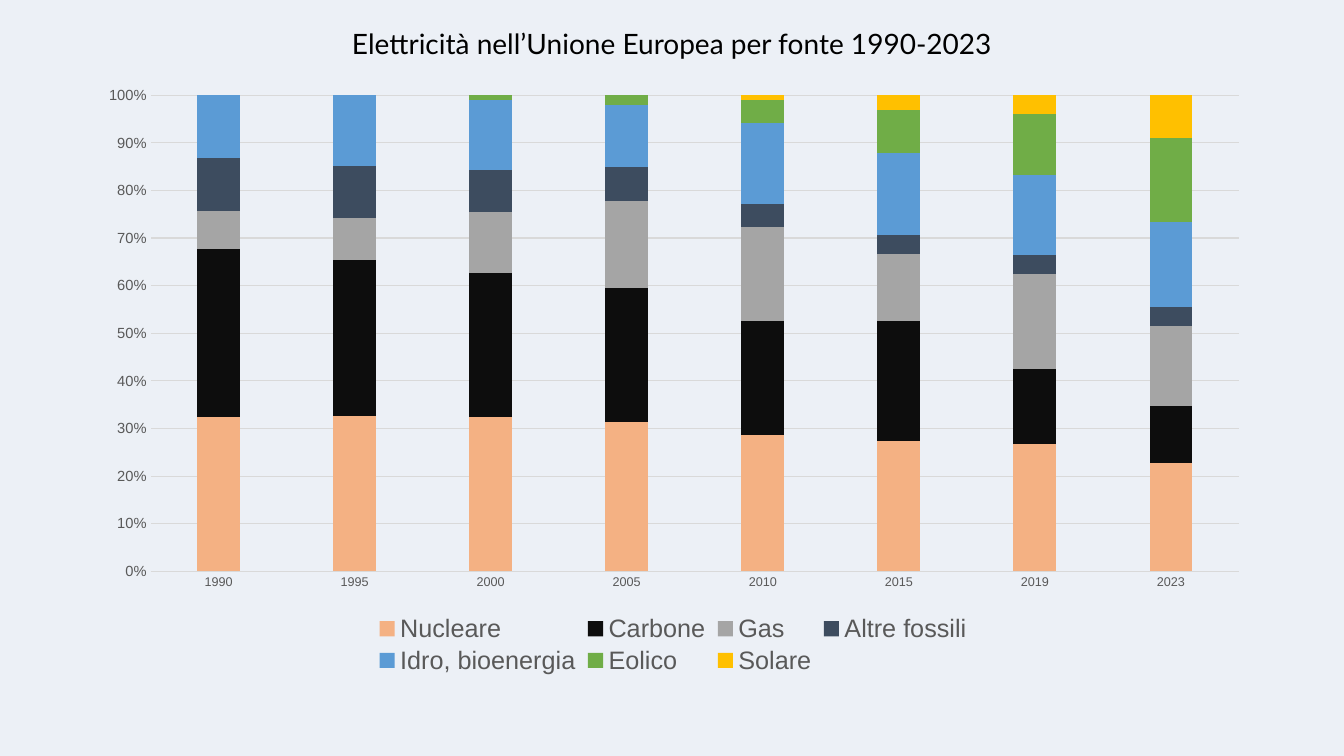
import pptx
import pptx.chart.data
import pptx.dml.color
import pptx.enum.chart
import pptx.enum.text
import pptx.oxml
import pptx.oxml.ns
import pptx.util
from pptx.util import Inches

YEARS = ["1990", "1995", "2000", "2005", "2010", "2015", "2019", "2023"]
SOURCES = [
    ("Nucleare", "F4B183", [32, 33, 33, 31, 29, 27, 27, 23]),
    ("Carbone", "0D0D0D", [35, 33, 31, 28, 24, 25, 16, 12]),
    ("Gas", "A5A5A5", [8, 9, 13, 18, 20, 14, 20, 17]),
    ("Altre fossili", "3D4C5F", [11, 11, 9, 7, 5, 4, 4, 4]),
    ("Idro, bioenergia", "5B9BD5", [13, 15, 15, 13, 17, 17, 17, 18]),
    ("Eolico", "70AD47", [0, 0, 1, 2, 5, 9, 13, 18]),
    ("Solare", "FFC000", [0, 0, 0, 0, 1, 3, 4, 9]),
]
LABEL_GREY = "595959"
RULE_GREY = "D9D9D9"


def rgb(value):
    return pptx.dml.color.RGBColor.from_string(value)


def set_font(font, name, size, color):
    font.name = name
    font.size = pptx.util.Pt(size)
    font.color.rgb = rgb(color)


def set_rule(line):
    line.color.rgb = rgb(RULE_GREY)
    line.width = pptx.util.Pt(0.75)


def set_layout(part, index, x, y, w, h, inner=False):
    """Fix a chart part at fractions of the chart's width and height."""
    for old in part.findall(pptx.oxml.ns.qn("c:layout")):
        part.remove(old)
    target = '<c:layoutTarget val="inner"/>' if inner else ""
    sizes = "".join(f'<c:{tag} val="{value}"/>'
                    for tag, value in zip("xywh", (x, y, w, h)))
    part.insert(index, pptx.oxml.parse_xml(
        f'<c:layout {pptx.oxml.ns.nsdecls("c")}><c:manualLayout>{target}'
        '<c:xMode val="edge"/><c:yMode val="edge"/>'
        f'{sizes}</c:manualLayout></c:layout>'))


def add_title(slide, left, top, width, height):
    title = slide.shapes.add_textbox(left, top, width, height)
    title.text_frame.word_wrap = True
    paragraph = title.text_frame.paragraphs[0]
    paragraph.alignment = pptx.enum.text.PP_ALIGN.CENTER
    run = paragraph.add_run()
    run.text = "Elettricità nell’Unione Europea per fonte 1990-2023"
    set_font(run.font, "Lato", 20, "000000")


def style_axes(chart):
    years, shares = chart.category_axis, chart.value_axis
    for axis, size in ((years, 9), (shares, 10.5)):
        axis.major_tick_mark = pptx.enum.chart.XL_TICK_MARK.NONE
        axis.minor_tick_mark = pptx.enum.chart.XL_TICK_MARK.NONE
        set_font(axis.tick_labels.font, "Arial", size, LABEL_GREY)
    set_rule(years.format.line)
    shares.format.line.fill.background()
    shares.has_major_gridlines = True
    set_rule(shares.major_gridlines.format.line)
    shares.minimum_scale, shares.maximum_scale = 0, 1
    shares.major_unit = 0.1
    shares.tick_labels.number_format = "0%"
    shares.tick_labels.number_format_is_linked = False


def add_mix_chart(slide, left, top, width, height):
    mix = pptx.chart.data.CategoryChartData()
    mix.categories = YEARS
    for name, _, shares in SOURCES:
        mix.add_series(name, shares)
    chart = slide.shapes.add_chart(
        pptx.enum.chart.XL_CHART_TYPE.COLUMN_STACKED_100,
        left, top, width, height, mix).chart
    set_font(chart.font, "Arial", 10, "000000")
    chart.has_title = False
    style_axes(chart)

    columns = chart.plots[0]
    columns.vary_by_categories = False
    columns.gap_width = 219
    columns.overlap = 100
    for series, (_, color, _) in zip(columns.series, SOURCES):
        series.format.fill.solid()
        series.format.fill.fore_color.rgb = rgb(color)

    chart.has_legend = True
    chart.legend.position = pptx.enum.chart.XL_LEGEND_POSITION.BOTTOM
    chart.legend.include_in_layout = False
    set_font(chart.legend.font, "Arial", 18, LABEL_GREY)

    plot_area = chart.element.xpath("c:chart/c:plotArea")[0]
    legend = chart.element.xpath("c:chart/c:legend")[0]
    set_layout(plot_area, 0, 0.056, 0.034, 0.925, 0.786, inner=True)
    set_layout(legend, 1, 0.24, 0.886, 0.52, 0.11)


def main():
    deck = pptx.Presentation()
    deck.slide_width, deck.slide_height = Inches(13.33), Inches(7.5)
    slide = deck.slides.add_slide(deck.slide_layouts[6])
    slide.background.fill.solid()
    slide.background.fill.fore_color.rgb = rgb("ECF0F6")
    add_mix_chart(slide, Inches(0.84), Inches(0.74), Inches(11.67), Inches(6.01))
    add_title(slide, 0, Inches(0.21), deck.slide_width, Inches(0.44))
    deck.save("out.pptx")


if __name__ == "__main__":
    main()
